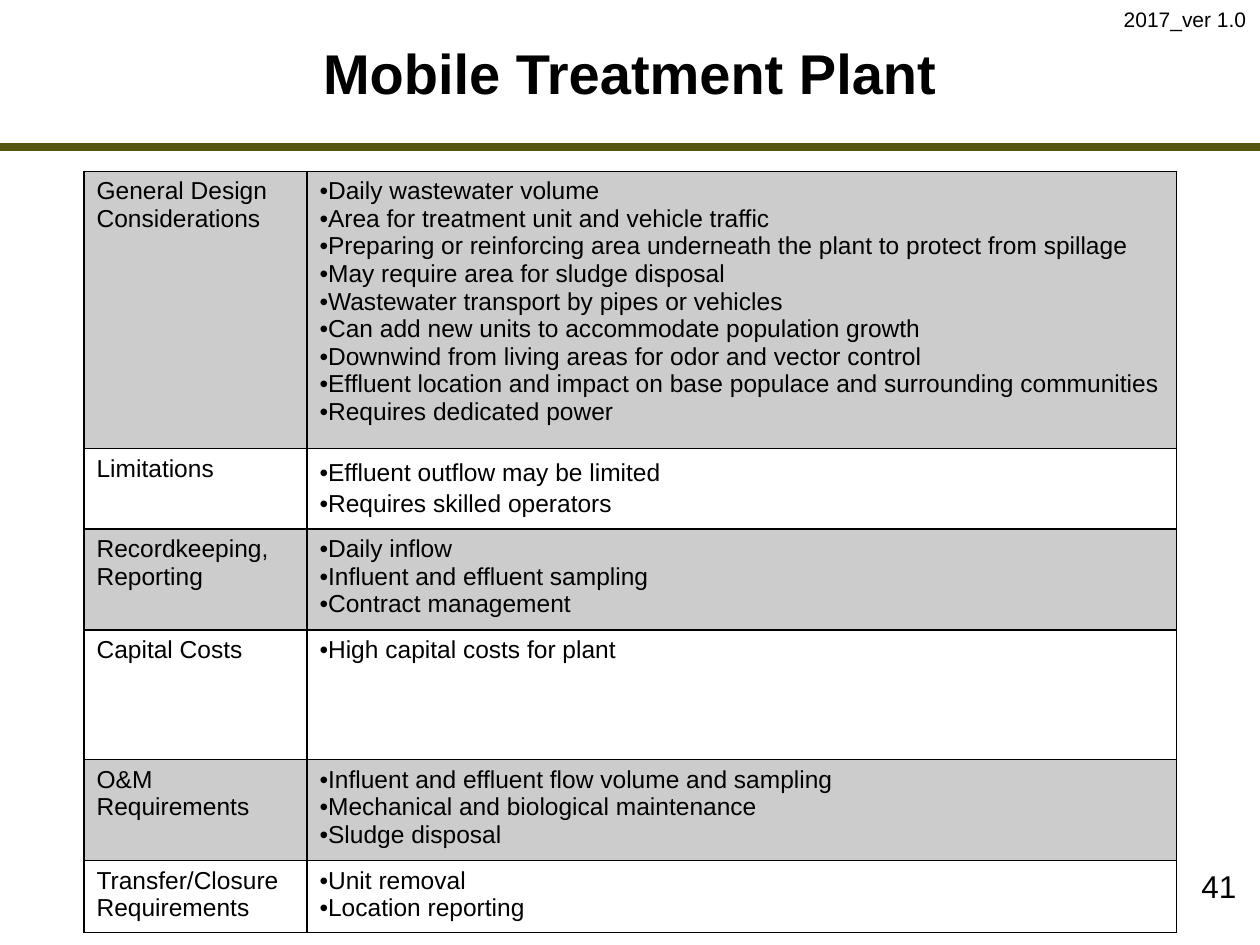
from lxml import etree
from pptx import Presentation
from pptx import util as u
from pptx.dml import color
from pptx.enum import shapes, text
from pptx.oxml import ns

ROWS = [  # height, heading, points, line spacing
    (2.2, "General Design Considerations", [
        "Daily wastewater volume",
        "Area for treatment unit and vehicle traffic",
        "Preparing or reinforcing area underneath the plant to protect from spillage",
        "May require area for sludge disposal",
        "Wastewater transport by pipes or vehicles",
        "Can add new units to accommodate population growth",
        "Downwind from living areas for odor and vector control",
        "Effluent location and impact on base populace and surrounding communities",
        "Requires dedicated power"], None),
    (0.64, "Limitations", [
        "Effluent outflow may be limited",
        "Requires skilled operators"], 1.15),
    (0.8, "Recordkeeping, Reporting", [
        "Daily inflow",
        "Influent and effluent sampling",
        "Contract management"], None),
    (1.03, "Capital Costs", ["High capital costs for plant"], None),
    (0.8, "O&M Requirements", [
        "Influent and effluent flow volume and sampling",
        "Mechanical and biological maintenance",
        "Sludge disposal"], None),
    (0.57, "Transfer/Closure Requirements", [
        "Unit removal",
        "Location reporting"], None),
]


def rgb(code):
    return color.RGBColor.from_string(code)


def child(node, tag, **attrs):
    return etree.SubElement(node, ns.qn(tag), attrs)


class Deck:
    face, ink, olive = "Arial", "000000", "545612"

    def __init__(self):
        self.prs = Presentation()
        self.prs.slide_width, self.prs.slide_height = u.Inches(10), u.Inches(7.5)
        self.slide = self.prs.slides.add_slide(self.prs.slide_layouts[5])

    def style(self, para, size, bold=False, align=text.PP_ALIGN.LEFT):
        para.alignment = align
        font = para.font
        font.name, font.size, font.bold = self.face, u.Pt(size), bold
        font.color.rgb = rgb(self.ink)

    def title(self, words, x, y, w, h):
        box = self.slide.shapes.title
        box.left, box.top, box.width, box.height = map(u.Inches, (x, y, w, h))
        frame = box.text_frame
        frame.text = words
        frame.auto_size = text.MSO_AUTO_SIZE.NONE
        frame.vertical_anchor = text.MSO_ANCHOR.MIDDLE
        self.style(frame.paragraphs[0], 32, True, text.PP_ALIGN.CENTER)

    def rule(self, y):
        line = self.slide.shapes.add_connector(
            shapes.MSO_CONNECTOR.STRAIGHT, 0, u.Inches(y), u.Inches(10), u.Inches(y))
        line.line.color.rgb, line.line.width = rgb(self.olive), u.Pt(4.5)
        child(line._element.spPr, "a:effectLst")

    def label(self, words, x, y, w, h, size, align=text.PP_ALIGN.LEFT, wrap=True):
        frame = self.slide.shapes.add_textbox(*map(u.Inches, (x, y, w, h))).text_frame
        frame.text, frame.word_wrap = words, wrap
        if not wrap:
            frame.auto_size = text.MSO_AUTO_SIZE.SHAPE_TO_FIT_TEXT
        self.style(frame.paragraphs[0], size, align=align)

    def cell(self, cell, lines, shade, bullets=False, space=None):
        cell.text = "\n".join(lines)
        for para in cell.text_frame.paragraphs:
            if bullets:
                props = para._p.get_or_add_pPr()
                props.set("marL", "0")
                props.set("indent", "0")
                child(props, "a:buFont", typeface=self.face)
                child(props, "a:buChar", char="•")
            if space:
                para.line_spacing = space
            self.style(para, 14)
        props = cell._tc.get_or_add_tcPr()
        # Borders come before the fill
        for side in ("L", "R", "T", "B"):
            edge = child(props, "a:ln" + side, w=str(u.Pt(1)))
            child(child(edge, "a:solidFill"), "a:srgbClr", val=self.ink)
        if shade:
            tint = child(child(props, "a:solidFill"), "a:srgbClr", val=self.ink)
            child(tint, "a:alpha", val="20000")
        else:
            child(props, "a:noFill")

    def table(self, rows, x, y, cols):
        high = sum(row[0] for row in rows)
        grid = self.slide.shapes.add_table(
            len(rows), len(cols), *map(u.Inches, (x, y, sum(cols), high))).table
        grid.first_row = grid.horz_banding = False
        for col, width in zip(grid.columns, cols):
            col.width = u.Inches(width)
        for i, (height, head, points, space) in enumerate(rows):
            grid.rows[i].height = u.Inches(height)
            shade = i % 2 == 0
            self.cell(grid.cell(i, 0), [head], shade)
            self.cell(grid.cell(i, 1), points, shade, True, space)


def main():
    deck = Deck()
    # Header
    deck.rule(1.17)
    deck.title("Mobile Treatment Plant", 1.17, 0.16, 7.66, 0.83)
    # Design table
    deck.table(ROWS, 2 / 3, 1.36, (1.77, 6.9))
    # Page number and version
    deck.label("41", 7.83, 6.83, 2.08, 0.5, 18, text.PP_ALIGN.RIGHT)
    deck.label("2017_ver 1.0", 8.82, 0, 1.18, 0.3, 12, wrap=False)
    deck.prs.save("out.pptx")


if __name__ == "__main__":
    main()
